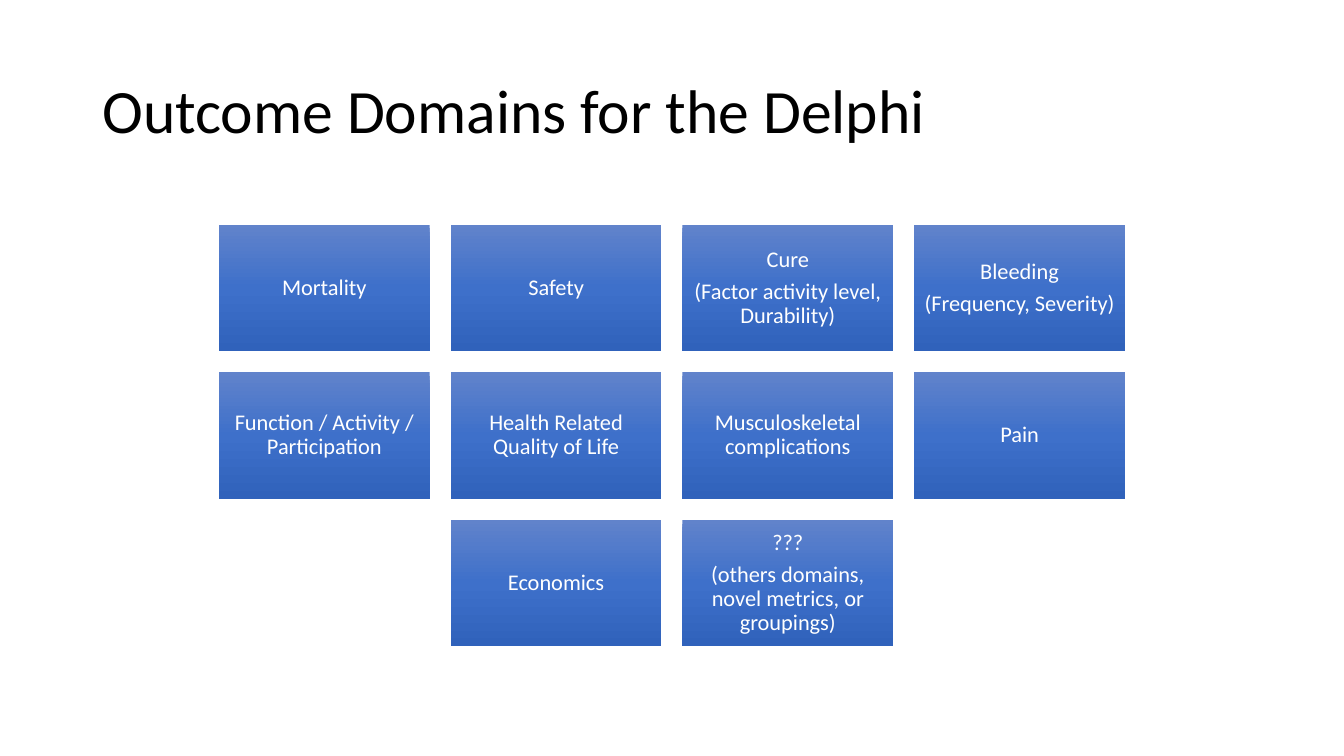
from copy import deepcopy
from dataclasses import dataclass

from pptx import Presentation
from pptx import util as u
from pptx.dml.color import RGBColor
from pptx.enum import shapes, text
from pptx.oxml import ns


@dataclass(frozen=True)
class Theme:
    font: str = "Calibri"
    title_size: int = 44
    domain_size: int = 16
    title_color: str = "000000"
    domain_color: str = "FFFFFF"
    gradient: tuple = ((0, "6183CB"), (0.5, "3E70CA"), (1, "3062BB"))


THEME = Theme()
SLIDE_WIDTH, SLIDE_HEIGHT = 33.87, 19.05
BOX_WIDTH, BOX_HEIGHT, GAP = 5.31, 3.19, 0.53
GRID_TOP = 5.66
DOMAIN_ROWS = [
    [
        ["Mortality"],
        ["Safety"],
        ["Cure", "(Factor activity level, Durability)"],
        ["Bleeding", "(Frequency, Severity)"],
    ],
    [
        ["Function / Activity / Participation"],
        ["Health Related Quality of Life"],
        ["Musculoskeletal complications"],
        ["Pain"],
    ],
    [
        ["Economics"],
        ["???", "(others domains, novel metrics, or groupings)"],
    ],
]


def write_text(frame, lines, *, size, color, align, inset=0.25, space_after=0):
    frame.word_wrap = True
    frame.auto_size = text.MSO_AUTO_SIZE.NONE
    frame.vertical_anchor = text.MSO_ANCHOR.MIDDLE
    frame.margin_left = frame.margin_right = u.Cm(inset)
    frame.margin_top = frame.margin_bottom = u.Cm(min(inset, 0.17))
    frame.text = "\n".join(lines)
    for paragraph in frame.paragraphs:
        paragraph.alignment = align
        paragraph.line_spacing = 0.9
        paragraph.space_before = u.Pt(0)
        paragraph.space_after = u.Pt(space_after)
        paragraph.font.name = THEME.font
        paragraph.font.size = u.Pt(size)
        paragraph.font.color.rgb = RGBColor.from_string(color)


def fill_gradient(shape):
    shape.fill.gradient()
    shape.fill.gradient_angle = 270
    stop_list = next(shape.element.iter(ns.qn("a:gsLst")))
    stop_list.insert(1, deepcopy(stop_list[0]))
    for stop, (position, color) in zip(shape.fill.gradient_stops, THEME.gradient):
        stop.position = position
        stop.color.rgb = RGBColor.from_string(color)


def add_title(slide, title):
    shape = slide.shapes.title
    shape.left, shape.top = u.Cm(2.33), u.Cm(1.01)
    shape.width, shape.height = u.Cm(29.21), u.Cm(3.68)
    write_text(shape.text_frame, [title], size=THEME.title_size,
               color=THEME.title_color, align=text.PP_ALIGN.LEFT)


def add_domain(slide, left, top, lines):
    shape = slide.shapes.add_shape(
        shapes.MSO_SHAPE.RECTANGLE,
        u.Cm(left), u.Cm(top), u.Cm(BOX_WIDTH), u.Cm(BOX_HEIGHT))
    shape.shadow.inherit = False
    shape.line.fill.background()
    fill_gradient(shape)
    write_text(shape.text_frame, lines, size=THEME.domain_size,
               color=THEME.domain_color, align=text.PP_ALIGN.CENTER,
               inset=0.17, space_after=5.6)


def add_domain_grid(slide):
    for row, domains in enumerate(DOMAIN_ROWS):
        row_width = len(domains) * (BOX_WIDTH + GAP) - GAP
        left = (SLIDE_WIDTH - row_width) / 2
        top = GRID_TOP + row * (BOX_HEIGHT + GAP)
        for column, lines in enumerate(domains):
            add_domain(slide, left + column * (BOX_WIDTH + GAP), top, lines)


def main():
    presentation = Presentation()
    presentation.slide_width = u.Cm(SLIDE_WIDTH)
    presentation.slide_height = u.Cm(SLIDE_HEIGHT)
    slide = presentation.slides.add_slide(
        presentation.slide_layouts.get_by_name("Title Only"))
    add_title(slide, "Outcome Domains for the Delphi")
    add_domain_grid(slide)
    presentation.save("out.pptx")


if __name__ == "__main__":
    main()
